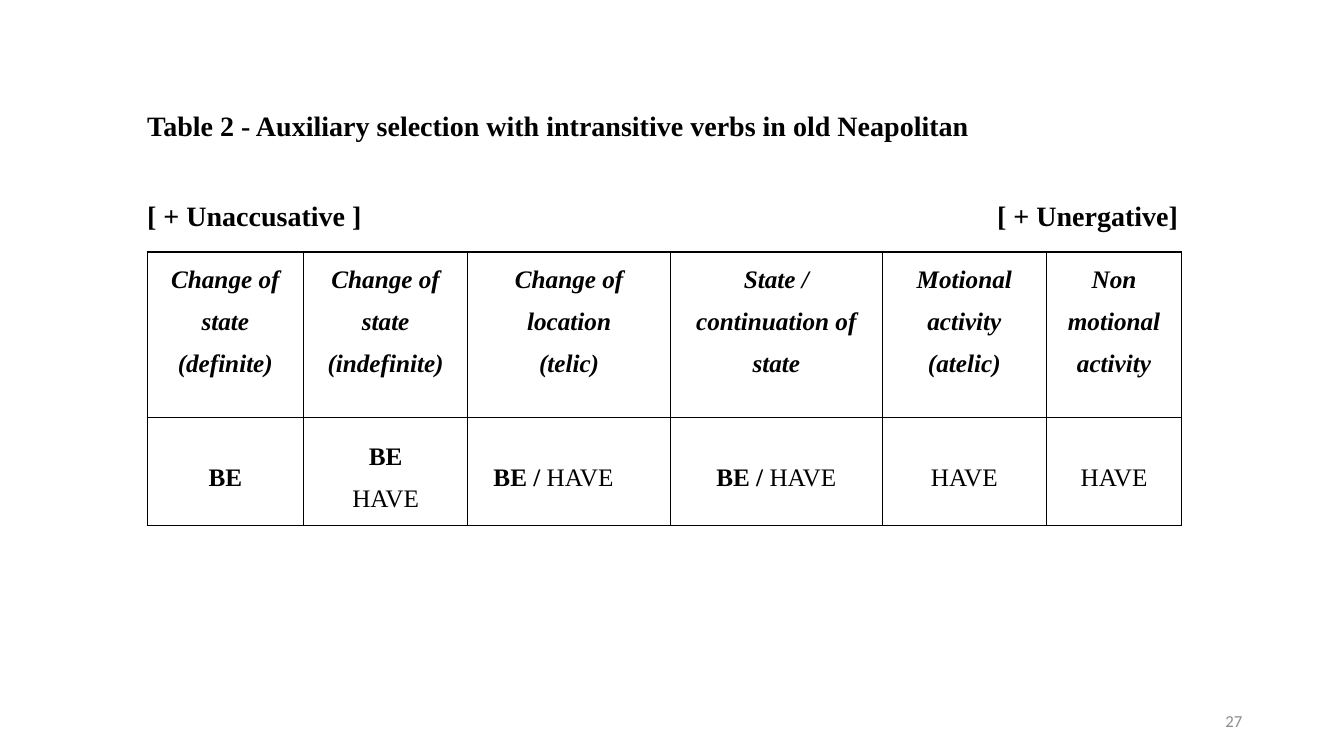
from lxml.etree import SubElement
from pptx import Presentation
from pptx.dml.color import RGBColor
from pptx.enum.text import MSO_ANCHOR as Anchor, MSO_AUTO_SIZE as AutoSize, PP_ALIGN as Align
from pptx.oxml.ns import qn
from pptx.util import Inches, Pt

BLACK = RGBColor(0x00, 0x00, 0x00)
GRAY = RGBColor(0x8C, 0x8C, 0x8C)

COLUMN_WIDTHS = [1.55, 1.63, 2.01, 2.1, 1.63, 1.34]
ROW_HEIGHTS = [1.64, 1.07]
VERB_CLASSES = [
    ["Change of state", "(definite)"],
    ["Change of state", "(indefinite)"],
    ["Change of", "location", "(telic)"],
    ["State /", "continuation of", "state"],
    ["Motional", "activity", "(atelic)"],
    ["Non", "motional activity"],
]
BE, HAVE = ("BE", True), ("HAVE", False)
BE_OR = ("BE / ", True)
# Each cell lists its paragraphs, each paragraph its (text, bold) runs.
AUXILIARIES = [
    [[BE]],
    [[BE], [HAVE]],
    [[BE_OR, HAVE]],
    [[BE_OR, HAVE]],
    [[HAVE]],
    [[HAVE]],
]


def apply(target, values):
    """Set every attribute named in values on target."""
    for name, value in values.items():
        setattr(target, name, value)


class SlideBuilder:
    serif = {"name": "Times New Roman", "size": Pt(20), "bold": True}
    cell_margins = {"margin_left": Inches(0.07), "margin_right": Inches(0.07),
                    "margin_top": 0, "margin_bottom": 0}

    def __init__(self, slide):
        self.slide = slide

    def add_run(self, paragraph, text, color=BLACK, **font_values):
        run = paragraph.add_run()
        run.text = text
        apply(run.font, {**self.serif, **font_values})
        run.font.color.rgb = color

    def place_title(self, text, left, top, width, height):
        title = self.slide.shapes.title
        apply(title, {"left": Inches(left), "top": Inches(top),
                      "width": Inches(width), "height": Inches(height)})
        apply(title.text_frame, {"word_wrap": True, "vertical_anchor": Anchor.TOP,
                                 "auto_size": AutoSize.NONE})
        paragraph = title.text_frame.paragraphs[0]
        paragraph.alignment = Align.LEFT
        self.add_run(paragraph, text)

    def add_label(self, text, left, top, width, height, alignment=Align.LEFT,
                  anchor=Anchor.TOP, **run_values):
        box = self.slide.shapes.add_textbox(
            Inches(left), Inches(top), Inches(width), Inches(height))
        apply(box.text_frame, {"word_wrap": anchor != Anchor.TOP, "vertical_anchor": anchor})
        paragraph = box.text_frame.paragraphs[0]
        paragraph.alignment = alignment
        self.add_run(paragraph, text, **run_values)

    def add_borders(self, cell):
        properties = cell._tc.get_or_add_tcPr()
        for side in ("a:lnL", "a:lnR", "a:lnT", "a:lnB"):
            line = SubElement(properties, qn(side), w=str(Pt(1)))
            fill = SubElement(line, qn("a:solidFill"))
            SubElement(fill, qn("a:srgbClr"), val=str(BLACK))

    def fill_cell(self, cell, paragraphs, anchor, italic):
        apply(cell, {**self.cell_margins, "vertical_anchor": anchor})
        self.add_borders(cell)
        cell.fill.background()
        for index, runs in enumerate(paragraphs):
            frame = cell.text_frame
            paragraph = frame.add_paragraph() if index else frame.paragraphs[0]
            apply(paragraph, {"alignment": Align.CENTER, "line_spacing": 1.5})
            for text, bold in runs:
                self.add_run(paragraph, text, size=Pt(18), bold=bold, italic=italic)

    def add_table(self, left, top):
        table = self.slide.shapes.add_table(
            len(ROW_HEIGHTS), len(COLUMN_WIDTHS), Inches(left), Inches(top),
            Inches(sum(COLUMN_WIDTHS)), Inches(sum(ROW_HEIGHTS))).table
        apply(table, {"first_row": False, "horz_banding": False})
        for row, height in zip(table.rows, ROW_HEIGHTS):
            row.height = Inches(height)
        for column, width in zip(table.columns, COLUMN_WIDTHS):
            column.width = Inches(width)
        for index, (lines, auxiliaries) in enumerate(zip(VERB_CLASSES, AUXILIARIES)):
            heading = [[(line, True)] for line in lines]
            self.fill_cell(table.cell(0, index), heading, Anchor.TOP, True)
            self.fill_cell(table.cell(1, index), auxiliaries, Anchor.MIDDLE, False)
        return table


def main():
    presentation = Presentation()
    apply(presentation, {"slide_width": Inches(13.33), "slide_height": Inches(7.5)})
    title_only = presentation.slide_layouts[5]
    builder = SlideBuilder(presentation.slides.add_slide(title_only))

    builder.place_title("Table 2 - Auxiliary selection with intransitive verbs in old Neapolitan",
                        1.36, 1.03, 9.52, 0.44)
    builder.add_label("[ + Unaccusative ]", 1.36, 1.92, 2.35, 0.44)
    builder.add_label("[ + Unergative]", 9.79, 1.92, 2.01, 0.44)
    table = builder.add_table(1.46, 2.5)
    # The change-of-location auxiliaries sit left of the column's centre.
    table.cell(1, 2).margin_right = Inches(0.38)
    builder.add_label("27", 9.42, 6.95, 3, 0.4, Align.RIGHT, Anchor.MIDDLE,
                      color=GRAY, name="Calibri", size=Pt(12), bold=False)
    presentation.save("out.pptx")


if __name__ == "__main__":
    main()
